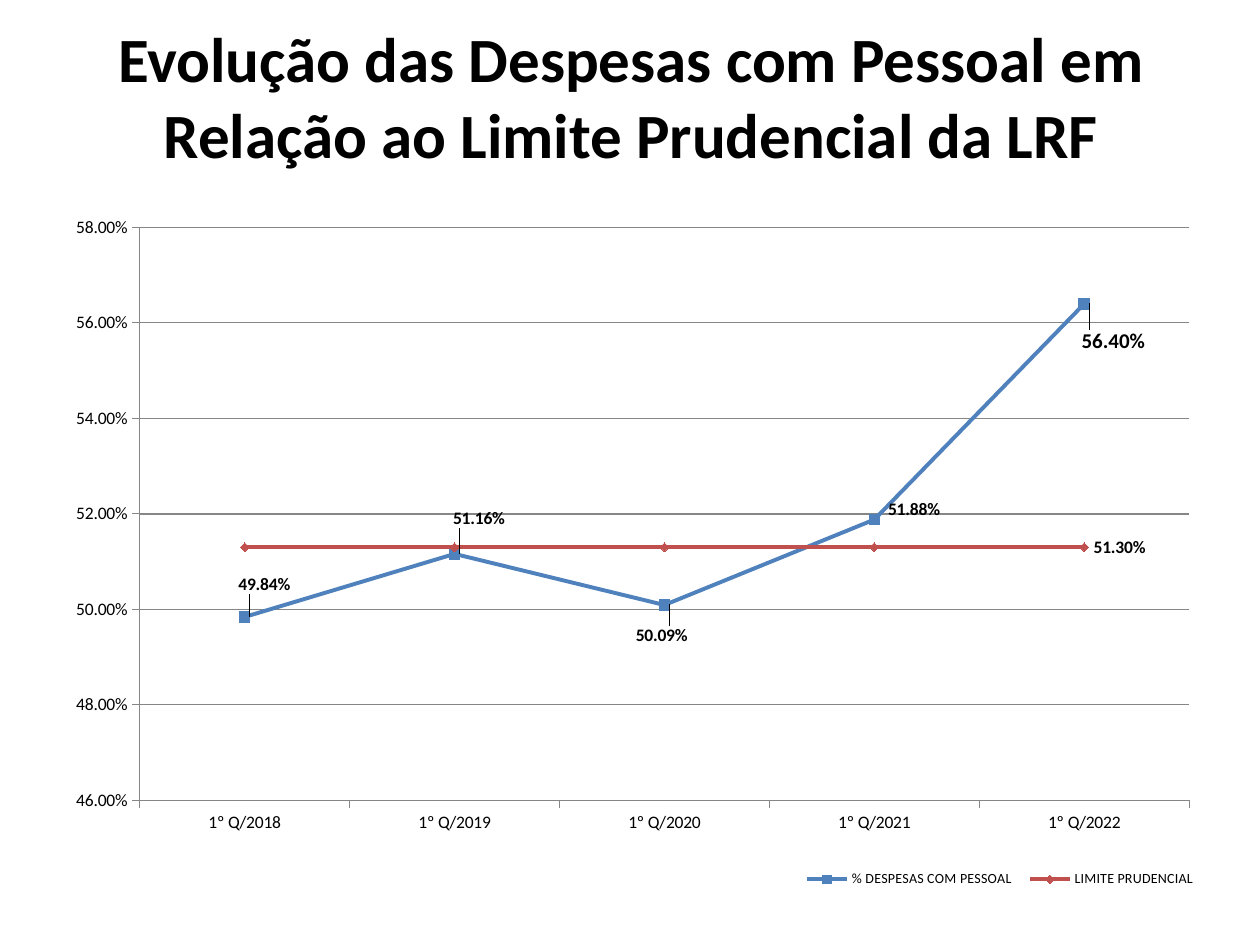
from dataclasses import dataclass

from lxml.etree import SubElement
from pptx import Presentation
from pptx.chart.data import CategoryChartData
from pptx.dml.color import RGBColor
from pptx.enum.chart import XL_CHART_TYPE, XL_LABEL_POSITION, XL_LEGEND_POSITION, XL_MARKER_STYLE, XL_TICK_MARK
from pptx.enum.text import MSO_ANCHOR, PP_ALIGN
from pptx.oxml.ns import qn
from pptx.util import Inches, Pt


@dataclass(frozen=True)
class Theme:
    font: str = "Calibri"
    text: str = "000000"
    grid: str = "868686"
    title_size: float = 36
    chart_size: float = 10
    legend_size: float = 8
    highlight_size: float = 12
    series_width: float = 2.25
    grid_width: float = 0.75


@dataclass(frozen=True)
class PointLabel:
    """A value label, moved from its place right of the point by chart fractions."""
    index: int
    x: float = 0
    y: float = 0
    size: float = Theme.chart_size


@dataclass(frozen=True)
class LineSeries:
    name: str
    values: tuple[float, ...]
    color: str
    marker: XL_MARKER_STYLE
    marker_size: int
    labels: tuple[PointLabel, ...]


THEME = Theme()
PERCENT = "0.00%"
QUARTERS = [f"1º Q/{year}" for year in range(2018, 2023)]
SERIES = (
    LineSeries(
        "% DESPESAS COM PESSOAL", (0.4984, 0.5116, 0.5009, 0.5188, 0.564),
        "4F81BD", XL_MARKER_STYLE.SQUARE, 6,
        (PointLabel(0, -0.014, -0.045), PointLabel(1, -0.01, -0.05),
         PointLabel(2, -0.033, 0.043), PointLabel(3, 0.003, -0.014),
         PointLabel(4, -0.011, 0.053, THEME.highlight_size)),
    ),
    LineSeries(
        "LIMITE PRUDENCIAL", (0.513,) * len(QUARTERS),
        "C0504D", XL_MARKER_STYLE.DIAMOND, 5, (PointLabel(4),),
    ),
)


def style_font(font, size: float, bold: bool = False) -> None:
    font.name = THEME.font
    font.size = Pt(size)
    font.bold = bold
    font.color.rgb = RGBColor.from_string(THEME.text)


def style_line(line, color: str, width: float) -> None:
    line.color.rgb = RGBColor.from_string(color)
    line.width = Pt(width)


def add_text(slide, text: str, *, left: float, top: float, width: float, height: float,
             size: float, bold: bool = False, align=PP_ALIGN.CENTER) -> None:
    shape = slide.shapes.add_textbox(Inches(left), Inches(top), Inches(width), Inches(height))
    frame = shape.text_frame
    frame.word_wrap = True
    frame.vertical_anchor = MSO_ANCHOR.MIDDLE
    paragraph = frame.paragraphs[0]
    paragraph.alignment = align
    run = paragraph.add_run()
    run.text = text
    style_font(run.font, size, bold)


def set_layout(parent, position: int, **settings) -> None:
    """Give a chart part a manual layout as the child at the given position."""
    for old_layout in parent.findall(qn("c:layout")):
        parent.remove(old_layout)
    layout = SubElement(parent, qn("c:layout"))
    manual = SubElement(layout, qn("c:manualLayout"))
    for name, value in settings.items():
        SubElement(manual, qn(f"c:{name}")).set("val", str(value))
    parent.insert(position, layout)


def style_series(series, line_series: LineSeries) -> None:
    color = RGBColor.from_string(line_series.color)
    series.smooth = False
    style_line(series.format.line, line_series.color, THEME.series_width)
    series.marker.style = line_series.marker
    series.marker.size = line_series.marker_size
    series.marker.format.fill.solid()
    series.marker.format.fill.fore_color.rgb = color
    series.marker.format.line.color.rgb = color

    # Only the listed points show a value
    series.data_labels.show_value = False
    for point_label in line_series.labels:
        label = series.points[point_label.index].data_label
        style_font(label.font, point_label.size, True)
        label.position = XL_LABEL_POSITION.RIGHT
    elements = series.data_labels._element.findall(qn("c:dLbl"))
    for element, point_label in zip(elements, line_series.labels):
        if point_label.x or point_label.y:
            set_layout(element, 1, x=point_label.x, y=point_label.y)


def style_axes(chart) -> None:
    for axis in (chart.category_axis, chart.value_axis):
        axis.major_tick_mark = XL_TICK_MARK.OUTSIDE
        axis.minor_tick_mark = XL_TICK_MARK.NONE
        style_line(axis.format.line, THEME.grid, THEME.grid_width)
        style_font(axis.tick_labels.font, THEME.chart_size)
    value_axis = chart.value_axis
    value_axis.minimum_scale, value_axis.maximum_scale = 0.46, 0.58
    value_axis.major_unit = 0.02
    value_axis.tick_labels.number_format = PERCENT
    value_axis.tick_labels.number_format_is_linked = False
    value_axis.has_major_gridlines = True
    style_line(value_axis.major_gridlines.format.line, THEME.grid, THEME.grid_width)


def add_expense_chart(slide) -> None:
    data = CategoryChartData(number_format=PERCENT)
    data.categories = QUARTERS
    for line_series in SERIES:
        data.add_series(line_series.name, line_series.values)
    chart = slide.shapes.add_chart(
        XL_CHART_TYPE.LINE_MARKERS, Inches(0.35), Inches(1.55), Inches(9.37), Inches(5.67), data
    ).chart
    chart.has_title = False
    style_font(chart.font, THEME.chart_size)
    style_axes(chart)

    # Lines and labels
    plot = chart.plots[0]
    plot.vary_by_categories = False
    for series, line_series in zip(plot.series, SERIES):
        style_series(series, line_series)

    # Legend and plot placement
    chart.has_legend = True
    chart.legend.position = XL_LEGEND_POSITION.RIGHT
    chart.legend.include_in_layout = False
    style_font(chart.legend.font, THEME.legend_size)
    set_layout(chart.legend._element, 1, xMode="edge", yMode="edge",
               x=0.635, y=0.935, w=0.35, h=0.045)
    set_layout(plot._element.getparent(), 0, layoutTarget="inner", xMode="edge", yMode="edge",
               x=0.081, y=0.045, w=0.889, h=0.802)


def main() -> None:
    presentation = Presentation()
    presentation.slide_width = Inches(10)
    presentation.slide_height = Inches(7.5)
    slide = presentation.slides.add_slide(presentation.slide_layouts[6])

    add_text(slide, "Evolução das Despesas com Pessoal em Relação ao Limite Prudencial da LRF",
             left=0.51, top=0.13, width=9, height=1.25, size=THEME.title_size, bold=True)
    add_expense_chart(slide)
    presentation.save("out.pptx")


if __name__ == "__main__":
    main()
